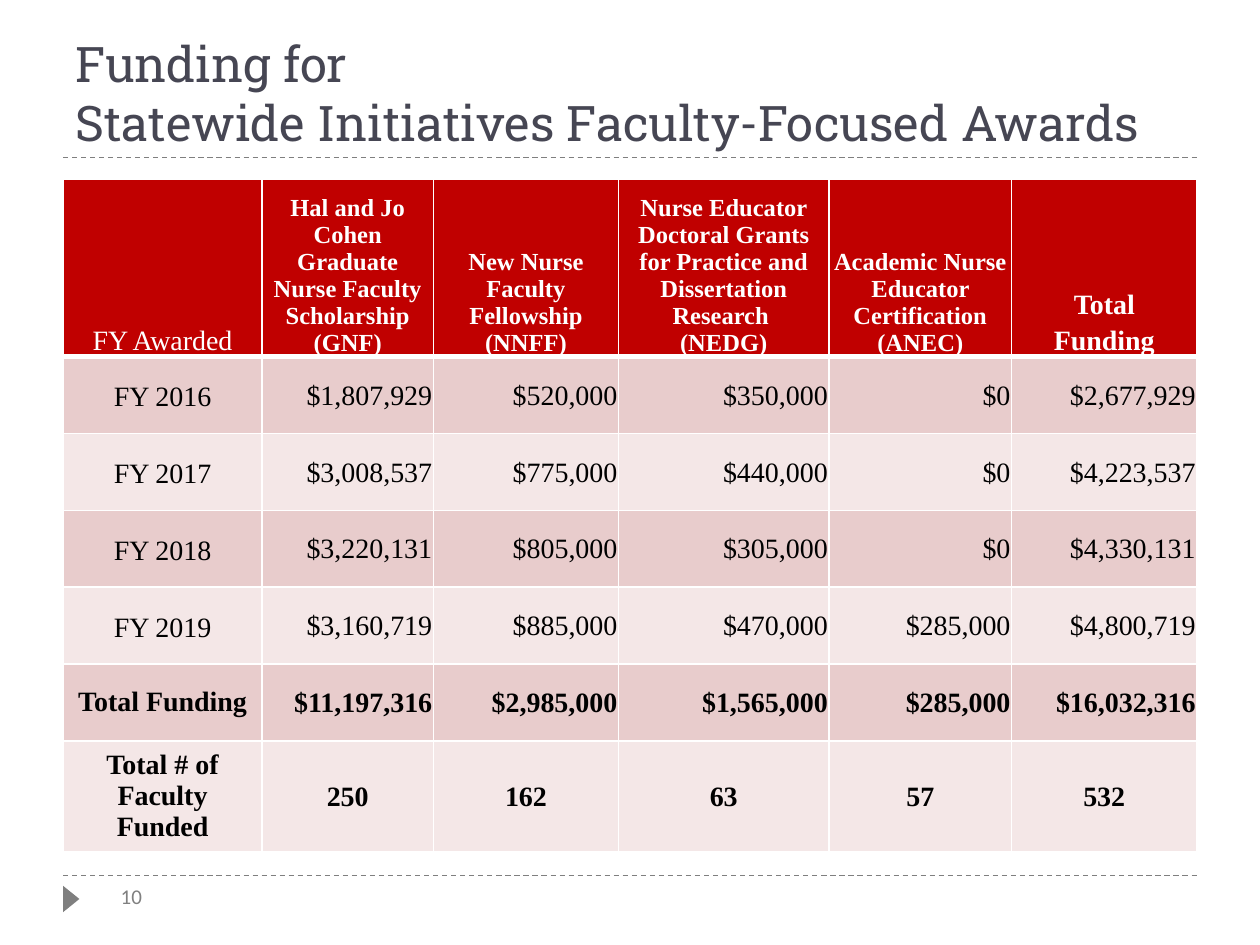
"""Build the slide on funding for faculty-focused nursing awards."""
from lxml import etree
from pptx import Presentation
from pptx import util as u
from pptx.dml.color import RGBColor
from pptx.enum import dml, shapes, text
from pptx.oxml import ns

TITLE = "Funding for\vStatewide Initiatives Faculty-Focused Awards"
PAGE_NUMBER = "10"
HEADERS = [
    "FY Awarded",
    "Hal and Jo Cohen Graduate Nurse Faculty Scholarship (GNF)",
    "New Nurse Faculty Fellowship (NNFF)",
    "Nurse Educator Doctoral Grants for Practice and Dissertation Research \n(NEDG)",
    "Academic Nurse Educator Certification (ANEC)",
    "Total Funding",
]
FUNDING = [
    ("FY 2016", "$1,807,929", "$520,000", "$350,000", "$0", "$2,677,929"),
    ("FY 2017", "$3,008,537", "$775,000", "$440,000", "$0", "$4,223,537"),
    ("FY 2018", "$3,220,131", "$805,000", "$305,000", "$0", "$4,330,131"),
    ("FY 2019", "$3,160,719", "$885,000", "$470,000", "$285,000", "$4,800,719"),
]
TOTALS = ("Total Funding", "$11,197,316", "$2,985,000", "$1,565,000", "$285,000", "$16,032,316")
RECIPIENTS = ("Total # of Faculty Funded", "250", "162", "63", "57", "532")
COLUMN_WIDTHS = [1.58, 1.36, 1.47, 1.67, 1.45, 1.47]
HEADER_HEIGHT, ROW_HEIGHT = 0.84, 0.61
LEFT, WIDTH = 0.5, 9
RULE_HEIGHTS = [6.95, 1.25]

THEME = {
    "title_font": "Roboto Slab", "table_font": "Times New Roman", "number_font": "Calibri",
    "title_size": 28, "table_size": 16, "header_size": 14, "number_size": 12,
    "title": "464653", "rule": "7F7F7F", "number": "808080", "white": "FFFFFF",
    "black": "000000", "header": "C00000", "bands": ("E8CCCC", "F4E7E7"),
}


def set_values(target, values):
    for name, value in values.items():
        setattr(target, name, value)


def box(left, top, width, height):
    return [u.Inches(length) for length in (left, top, width, height)]


def write(frame, content, font, size, color, bold=False, **paragraph_format):
    frame.text = content
    for paragraph in frame.paragraphs:
        set_values(paragraph, paragraph_format)
        for run in paragraph.runs:
            set_values(run.font, {"name": font, "size": u.Pt(size), "bold": bold})
            run.font.color.rgb = RGBColor.from_string(color)


def set_borders(cell, bottom_width):
    properties = cell._tc.get_or_add_tcPr()
    for index, (side, width) in enumerate(zip("LRTB", (1, 1, 1, bottom_width))):
        line = etree.Element(ns.qn(f"a:ln{side}"), w=str(u.Pt(width)))
        fill = etree.SubElement(line, ns.qn("a:solidFill"))
        etree.SubElement(fill, ns.qn("a:srgbClr"), val=THEME["white"])
        properties.insert(index, line)


def cell_margins(row, column, last_row, last_column):
    if column == 0:
        return (0.07, 0.04) if row == last_row else (0.06, 0)
    if row == 0 and column == last_column:
        return 0.07, 0
    return 0.01, 0.01


def format_cell(cell, content, row, column, last_row, last_column):
    is_header, is_label = row == 0, column == 0
    is_edge = column in (0, last_column)
    side, top = cell_margins(row, column, last_row, last_column)
    bottom = top if top > 0.01 else 0
    anchor = text.MSO_ANCHOR.BOTTOM if is_header else text.MSO_ANCHOR.MIDDLE
    set_values(cell, {
        "margin_left": u.Inches(side), "margin_right": u.Inches(side),
        "margin_top": u.Inches(top), "margin_bottom": u.Inches(bottom),
        "vertical_anchor": anchor,
    })
    cell.fill.solid()
    fill = THEME["header"] if is_header else THEME["bands"][(row - 1) % 2]
    cell.fill.fore_color.rgb = RGBColor.from_string(fill)
    centred = is_header or is_label or row == last_row
    loose = (is_header and is_edge) or (is_label and row <= len(FUNDING))
    write(
        cell.text_frame, content, THEME["table_font"],
        THEME["header_size" if is_header and not is_edge else "table_size"],
        THEME["white" if is_header else "black"],
        bold=(is_header and not is_label) or row > len(FUNDING),
        alignment=text.PP_ALIGN.CENTER if centred else text.PP_ALIGN.RIGHT,
        line_spacing=1.15 if loose else 1.0,
    )
    set_borders(cell, 3 if is_header else 1)


def add_rule(slide, top):
    ends = [u.Inches(length) for length in (LEFT, top, LEFT + WIDTH, top)]
    rule = slide.shapes.add_connector(shapes.MSO_CONNECTOR.STRAIGHT, *ends)
    set_values(rule.line, {"width": u.Pt(0.75), "dash_style": dml.MSO_LINE.DASH})
    rule.line.color.rgb = RGBColor.from_string(THEME["rule"])
    etree.SubElement(rule._element.spPr, ns.qn("a:effectLst"))


def add_page_marker(slide):
    marker = slide.shapes.add_shape(
        shapes.MSO_SHAPE.ISOSCELES_TRIANGLE, *box(0.46, 7.07, 0.21, 0.13))
    marker.rotation = 90
    marker.shadow.inherit = False
    marker.fill.solid()
    marker.fill.fore_color.rgb = RGBColor.from_string(THEME["rule"])
    marker.line.fill.background()
    number = slide.shapes.add_textbox(*box(0.86, 6.96, 0.41, 0.3))
    number.text_frame.word_wrap = False
    write(number.text_frame, PAGE_NUMBER, THEME["number_font"], THEME["number_size"], THEME["number"])


def add_title(slide):
    title = slide.shapes.title
    set_values(title, dict(zip(("left", "top", "width", "height"), box(LEFT, 0.17, WIDTH, 1.08))))
    set_values(title.text_frame, {
        "vertical_anchor": text.MSO_ANCHOR.BOTTOM, "word_wrap": True,
        "auto_size": text.MSO_AUTO_SIZE.NONE,
    })
    write(title.text_frame, TITLE, THEME["title_font"], THEME["title_size"], THEME["title"],
          alignment=text.PP_ALIGN.LEFT)


def add_funding_table(slide):
    rows = [HEADERS, *FUNDING, TOTALS, RECIPIENTS]
    last_row, last_column = len(rows) - 1, len(HEADERS) - 1
    frame = slide.shapes.add_table(len(rows), len(HEADERS), *box(LEFT, 1.42, WIDTH, 5.33))
    table = frame.table
    for column, width in zip(table.columns, COLUMN_WIDTHS):
        column.width = u.Inches(width)
    for row_index, values in enumerate(rows):
        table.rows[row_index].height = u.Inches(ROW_HEIGHT if row_index else HEADER_HEIGHT)
        for column_index, content in enumerate(values):
            format_cell(table.cell(row_index, column_index), content,
                        row_index, column_index, last_row, last_column)
    frame.height = u.Inches(5.33)


def main():
    presentation = Presentation()
    set_values(presentation, {"slide_width": u.Inches(10), "slide_height": u.Inches(7.5)})
    slide = presentation.slides.add_slide(presentation.slide_layouts[5])
    for top in RULE_HEIGHTS:
        add_rule(slide, top)
    add_page_marker(slide)
    add_title(slide)
    add_funding_table(slide)
    presentation.save("out.pptx")


if __name__ == "__main__":
    main()
